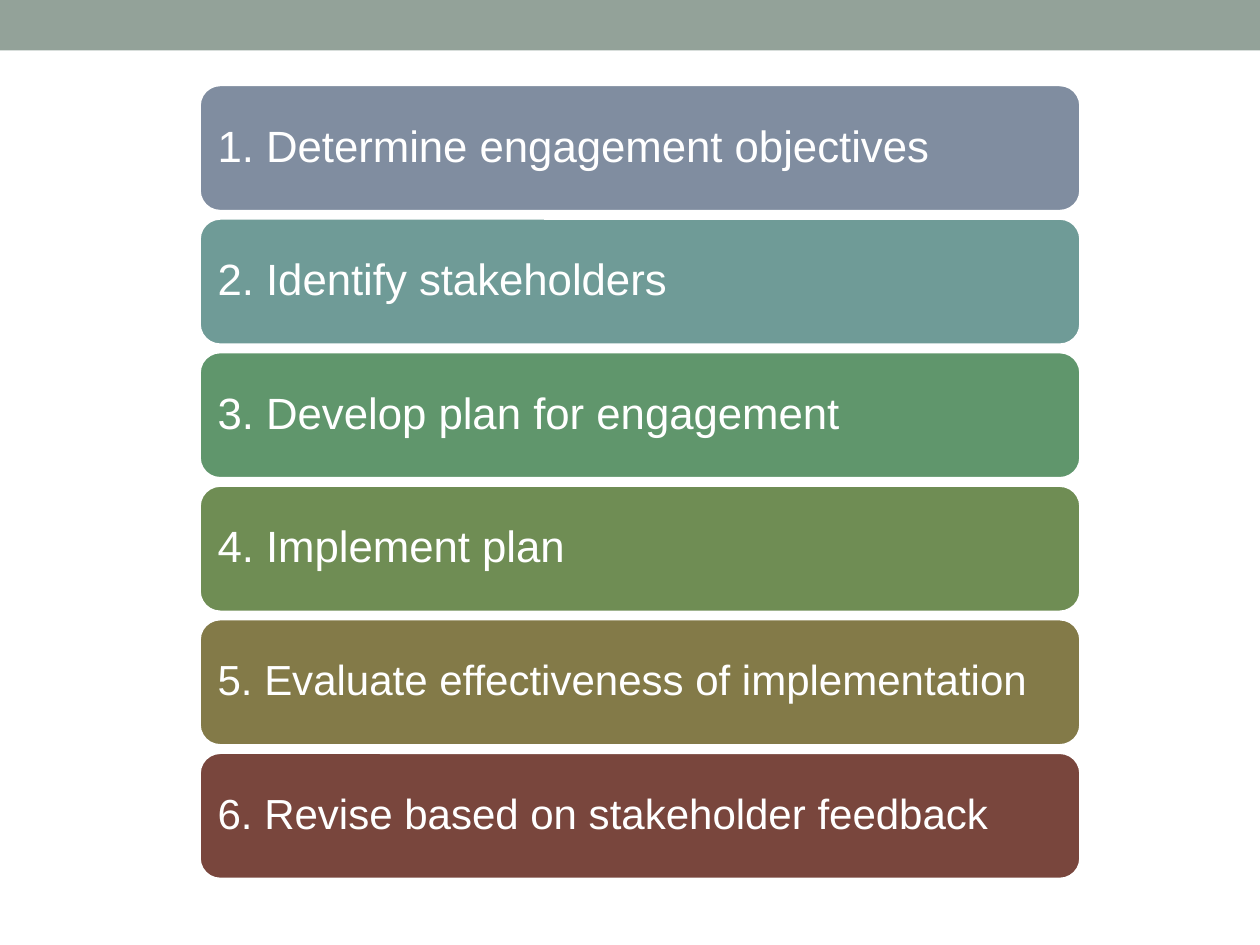
import pptx
import pptx.dml.color
import pptx.enum.shapes
import pptx.enum.text
import pptx.util

Inches = pptx.util.Inches
Pt = pptx.util.Pt
SHAPE = pptx.enum.shapes.MSO_SHAPE

COLORS = {
    "band": "93A299",
    "white": "FFFFFF",
    "slate": "808DA0",
    "teal": "6F9B97",
    "green": "60966C",
    "olive": "6F8D54",
    "mustard": "837A48",
    "rust": "79463D",
}

# Step text, fill colour, font size
STEPS = [
    ("1. Determine engagement objectives", "slate", 25),
    ("2. Identify stakeholders", "teal", 25),
    ("3. Develop plan for engagement", "green", 25),
    ("4. Implement plan", "olive", 25),
    ("5. Evaluate effectiveness of implementation", "mustard", 24),
    ("6. Revise based on stakeholder feedback", "rust", 24),
]
STEP_LEFT, STEP_TOP = 1.58, 0.67
STEP_WIDTH, STEP_HEIGHT = 7, 1.01
STEP_GAP = 0.05


def rgb(name):
    return pptx.dml.color.RGBColor.from_string(COLORS[name])


def add_block(s, kind, left, top, width, height, color):
    sp = s.shapes.add_shape(
        kind, Inches(left), Inches(top), Inches(width), Inches(height))
    sp.shadow.inherit = False
    sp.fill.solid()
    sp.fill.fore_color.rgb = rgb(color)
    sp.line.fill.background()
    return sp


def add_step(s, top, text, color, size):
    sp = add_block(s, SHAPE.ROUNDED_RECTANGLE,
                   STEP_LEFT, top, STEP_WIDTH, STEP_HEIGHT, color)
    sp.line.color.rgb = rgb("white")
    sp.line.width = Pt(2.08)

    tf = sp.text_frame
    tf.text = text
    tf.word_wrap = True
    tf.vertical_anchor = pptx.enum.text.MSO_ANCHOR.MIDDLE
    p = tf.paragraphs[0]
    p.alignment = pptx.enum.text.PP_ALIGN.LEFT
    p.line_spacing = 0.9
    r = p.runs[0]
    r.font.name = "Arial"
    r.font.size = Pt(size)
    r.font.color.rgb = rgb("white")


def main():
    prs = pptx.Presentation()
    prs.slide_width, prs.slide_height = Inches(10), Inches(7.5)
    s = prs.slides.add_slide(prs.slide_layouts[6])

    # Top band
    add_block(s, SHAPE.RECTANGLE, 0, 0, 10, 0.4, "band")

    # Stacked steps
    pitch = STEP_HEIGHT + STEP_GAP
    for i, (text, color, size) in enumerate(STEPS):
        add_step(s, STEP_TOP + i * pitch, text, color, size)

    prs.save("out.pptx")


if __name__ == "__main__":
    main()
